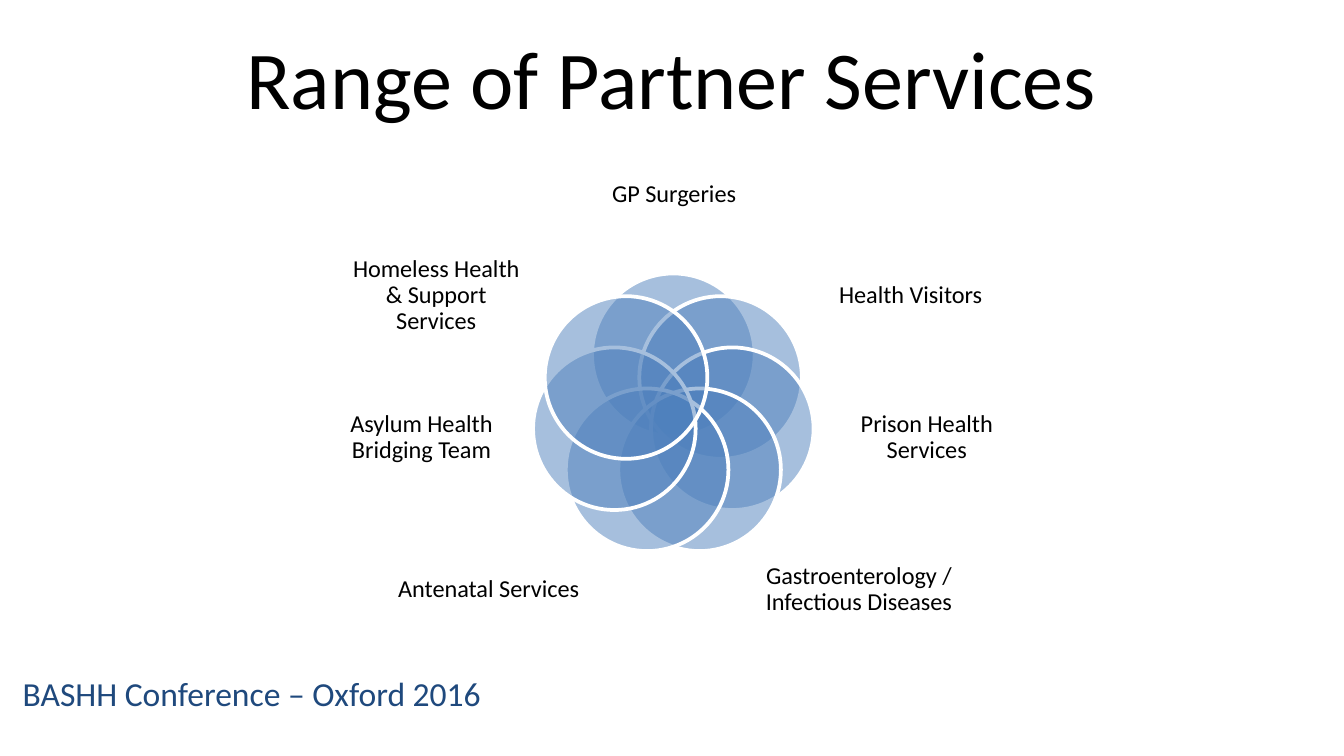
from math import cos, pi, sin

from lxml import etree
from pptx import Presentation
from pptx.dml.color import RGBColor
from pptx.enum.shapes import MSO_SHAPE as Shape
from pptx.enum.text import MSO_ANCHOR as Anchor, PP_ALIGN as Align
from pptx.oxml.ns import qn
from pptx.util import Inches, Pt


def rgb(hex_color):
    return RGBColor.from_string(hex_color)


def add_text(text, left, top, width, height, *, size, color="000000",
             align=Align.CENTER, anchor=Anchor.MIDDLE, inset=(0.1, 0.05), spacing=1.0):
    """Add a wrapped text box; inset is (left and right, top and bottom) in inches."""
    box = slide.shapes.add_textbox(Inches(left), Inches(top), Inches(width), Inches(height))
    frame = box.text_frame
    frame.word_wrap = True
    frame.vertical_anchor = anchor
    frame.margin_left = frame.margin_right = Inches(inset[0])
    frame.margin_top = frame.margin_bottom = Inches(inset[1])
    paragraph = frame.paragraphs[0]
    paragraph.alignment = align
    paragraph.line_spacing = spacing
    run = paragraph.add_run()
    run.text = text
    run.font.name = "Calibri"
    run.font.size = Pt(size)
    run.font.color.rgb = rgb(color)


prs = Presentation()
prs.slide_width = Inches(10)
prs.slide_height = Inches(10) * 9 // 16
slide = prs.slides.add_slide(prs.slide_layouts[6])

add_text("BASHH Conference – Oxford 2016", 0.07, 4.96, 4.78, 0.69,
         size=18, color="1F497D", align=Align.LEFT, anchor=Anchor.TOP)
add_text("Range of Partner Services", 0.75, 0.21, 8.5, 0.72, size=44)

# Services clockwise from the top, each with its label's left, top, width and height
services = [
    ("GP Surgeries", 4.32, 1.08, 1.39, 0.74),
    ("Health Visitors", 6.12, 1.79, 1.31, 0.82),
    ("Prison Health Services", 6.25, 2.82, 1.29, 0.87),
    ("Gastroenterology / Infectious Diseases", 5.69, 3.99, 1.4, 0.8),
    ("Antenatal Services", 2.94, 3.99, 1.39, 0.8),
    ("Asylum Health Bridging Team", 2.49, 2.82, 1.29, 0.87),
    ("Homeless Health & Support Services", 2.59, 1.79, 1.31, 0.82),
]
CENTER_X, CENTER_Y, RING_RADIUS, DIAMETER = 5.01, 3.09, 0.45, 1.21

for i, (service, *label_area) in enumerate(services):
    angle = 2 * pi * i / len(services)
    left = CENTER_X + RING_RADIUS * sin(angle) - DIAMETER / 2
    top = CENTER_Y - RING_RADIUS * cos(angle) - DIAMETER / 2
    petal = slide.shapes.add_shape(Shape.OVAL, Inches(left), Inches(top),
                                   Inches(DIAMETER), Inches(DIAMETER))
    petal.shadow.inherit = False
    petal.fill.solid()
    petal.fill.fore_color.rgb = rgb("4F81BD")
    fill_color = petal.fill._xPr.find(qn("a:solidFill"))[0]
    etree.SubElement(fill_color, qn("a:alpha"), val="50000")
    petal.line.color.rgb = rgb("FFFFFF")
    petal.line.width = Pt(2)
    add_text(service, *label_area, size=13, inset=(0, 0), spacing=0.9)

prs.save("out.pptx")
